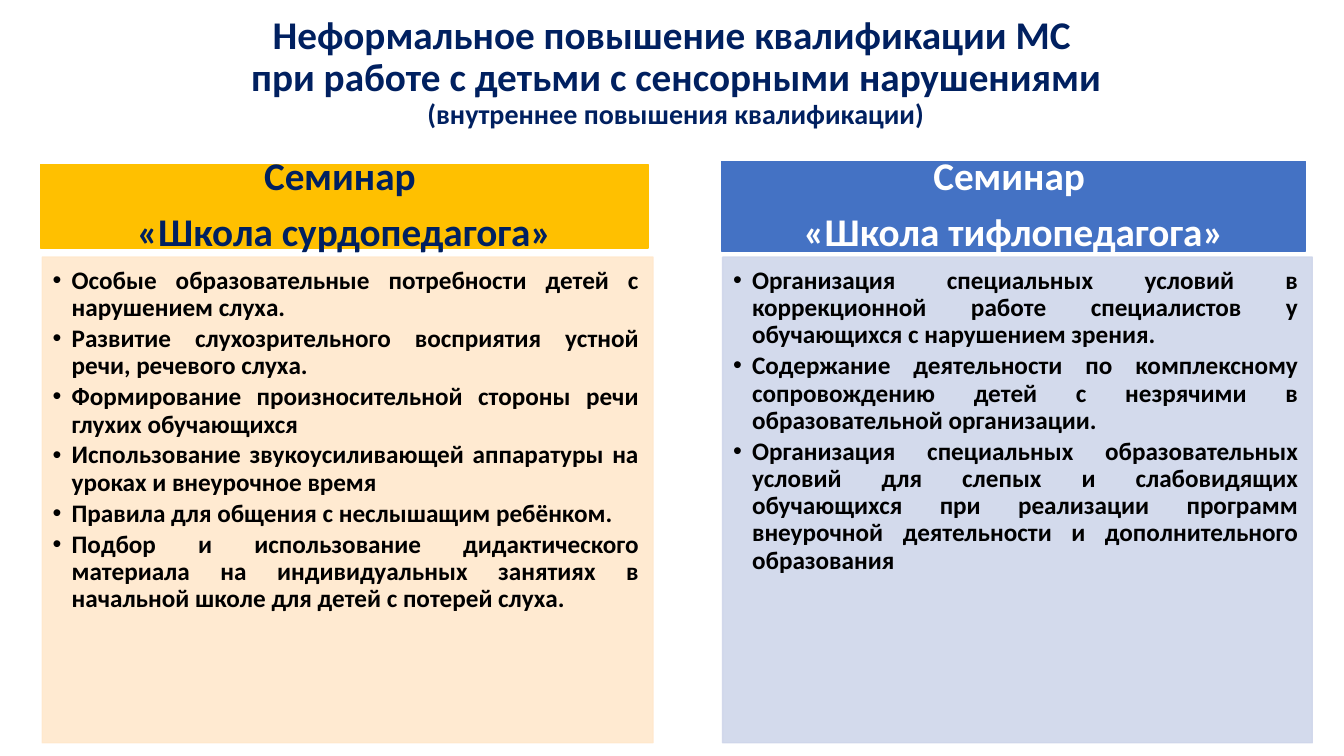
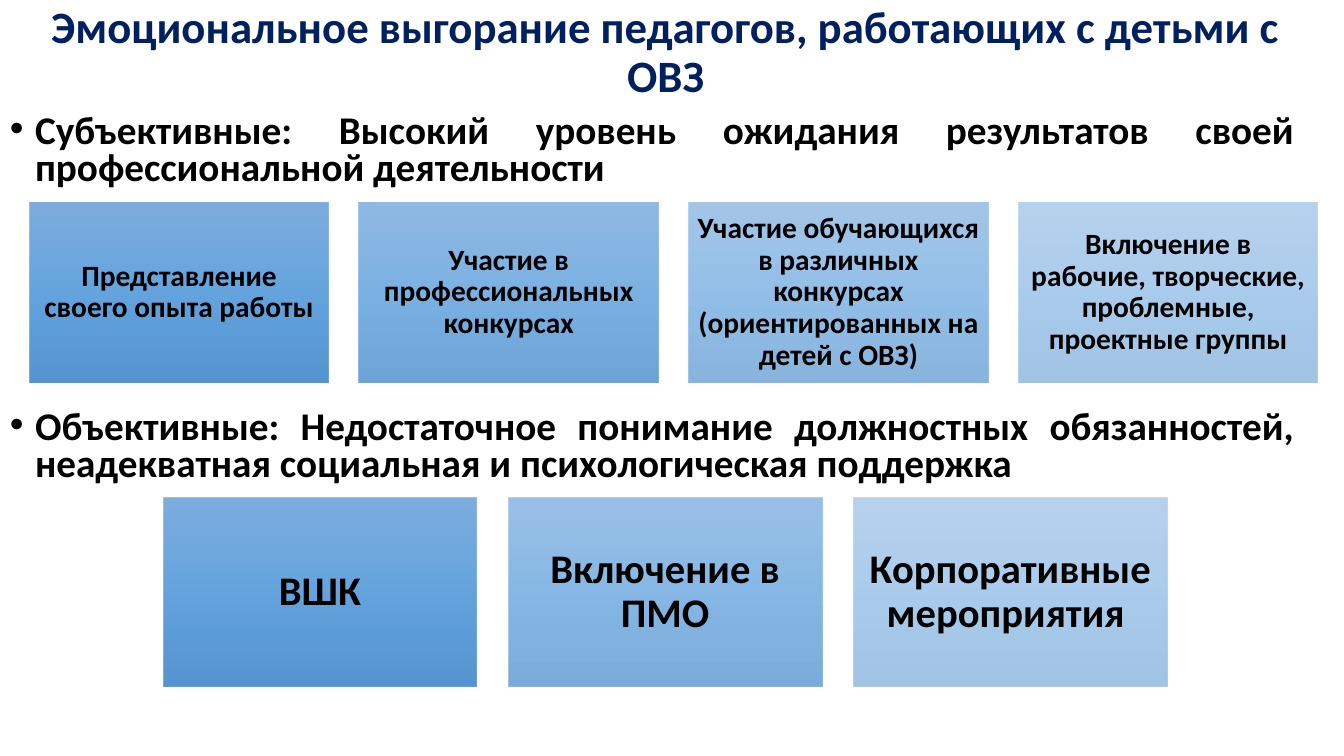
import copy

import pptx
import pptx.dml.color
import pptx.enum.shapes
import pptx.enum.text
import pptx.oxml.ns
import pptx.util
from lxml import etree

Pt = pptx.util.Pt
RGBColor = pptx.dml.color.RGBColor
ALIGN = pptx.enum.text.PP_ALIGN
ANCHOR = pptx.enum.text.MSO_ANCHOR
qn = pptx.oxml.ns.qn

NAVY = RGBColor(0x00, 0x20, 0x60)
BLACK = RGBColor(0x00, 0x00, 0x00)
WHITE = RGBColor(0xFF, 0xFF, 0xFF)
GOLD = RGBColor(0xFF, 0xC0, 0x00)
CREAM = RGBColor(0xFF, 0xE8, 0xCC)
BLUE = RGBColor(0x44, 0x72, 0xC4)
LAVENDER = RGBColor(0xCF, 0xD6, 0xEA)
TILE_GRADIENT = (
    RGBColor(0x71, 0xA6, 0xDB),
    RGBColor(0x55, 0x9B, 0xDB),
    RGBColor(0x44, 0x8A, 0xCA),
)
FONT = "Calibri"


def set_attributes(target, values):
    for name, value in values.items():
        setattr(target, name, value)


def set_opacity(shape, percent):
    """Apply one opacity to every fill and line colour of the shape."""
    for color in list(shape._element.spPr.iter(qn("a:srgbClr"))):
        alpha = etree.SubElement(color, qn("a:alpha"))
        alpha.set("val", str(round(percent * 1000)))


class Deck:
    def __init__(self):
        self.presentation = pptx.Presentation()
        set_attributes(self.presentation, {"slide_width": Pt(960), "slide_height": Pt(540)})
        self.slide = None

    def add_slide(self):
        layout = self.presentation.slide_layouts[6]
        self.slide = self.presentation.slides.add_slide(layout)

    def set_frame(self, shape, anchor, insets):
        sides = ("margin_left", "margin_top", "margin_right", "margin_bottom")
        frame = shape.text_frame
        set_attributes(frame, {
            "word_wrap": True,
            "auto_size": pptx.enum.text.MSO_AUTO_SIZE.NONE,
            "vertical_anchor": anchor,
            **{side: Pt(inset) for side, inset in zip(sides, insets)},
        })
        return frame

    def add_paragraphs(self, frame, texts, size, color, **paragraph_format):
        values = {"alignment": ALIGN.CENTER, "line_spacing": 0.9,
                  "space_before": Pt(0), "space_after": Pt(0), **paragraph_format}
        for index, text in enumerate(texts):
            paragraph = frame.add_paragraph() if index else frame.paragraphs[0]
            set_attributes(paragraph, values)
            self.add_run(paragraph, text, size, color)

    def add_run(self, paragraph, text, size, color):
        run = paragraph.add_run()
        run.text = text
        set_attributes(run.font, {"name": FONT, "size": Pt(size), "bold": True})
        run.font.color.rgb = color

    def add_bullets(self, frame, indent):
        for paragraph in frame.paragraphs:
            properties = paragraph._p.get_or_add_pPr()
            properties.set("marL", str(Pt(indent)))
            properties.set("indent", str(-Pt(indent)))
            etree.SubElement(properties, qn("a:buFont")).set("typeface", "Arial")
            etree.SubElement(properties, qn("a:buChar")).set("char", "•")

    def text_box(self, box, anchor):
        shape = self.slide.shapes.add_textbox(*map(Pt, box))
        return self.set_frame(shape, anchor, (7.2, 3.6, 7.2, 3.6))

    def title(self, box, lines, size, subtitle=None, subtitle_size=20):
        frame = self.text_box(box, ANCHOR.MIDDLE)
        self.add_paragraphs(frame, lines[:1], size, NAVY)
        paragraph = frame.paragraphs[0]
        for line in lines[1:]:
            paragraph.add_line_break()
            self.add_run(paragraph, line, size, NAVY)
        if subtitle:
            paragraph.add_line_break()
            self.add_run(paragraph, subtitle, subtitle_size, NAVY)

    def statement(self, box, text):
        frame = self.text_box(box, ANCHOR.TOP)
        self.add_paragraphs(frame, [text], 28, BLACK,
                            alignment=ALIGN.JUSTIFY, line_spacing=0.8)
        self.add_bullets(frame, 18)

    def rectangle(self, box):
        kind = pptx.enum.shapes.MSO_SHAPE.RECTANGLE
        shape = self.slide.shapes.add_shape(kind, *map(Pt, box))
        shape.shadow.inherit = False
        return shape

    def solid_rectangle(self, box, color):
        shape = self.rectangle(box)
        shape.fill.solid()
        shape.fill.fore_color.rgb = color
        shape.line.color.rgb = color
        shape.line.width = Pt(1)
        return shape

    def header(self, box, lines, fill, color):
        shape = self.solid_rectangle(box, fill)
        frame = self.set_frame(shape, ANCHOR.MIDDLE, (16, 9, 16, 9))
        self.add_paragraphs(frame, lines, 28, color, space_after=Pt(9.8))

    def panel(self, box, items, fill):
        shape = self.solid_rectangle(box, fill)
        set_opacity(shape, 90)
        frame = self.set_frame(shape, ANCHOR.TOP, (7.5, 7.5, 10, 11.5))
        self.add_paragraphs(frame, items, 18, BLACK,
                            alignment=ALIGN.JUSTIFY, space_after=Pt(2.7))
        self.add_bullets(frame, 13.5)

    def tile(self, box, text, size, inset, opacity):
        shape = self.rectangle(box)
        shape.line.fill.background()
        shape.fill.gradient()
        shape.fill.gradient_angle = 270
        first_stop = shape._element.spPr.find(".//" + qn("a:gs"))
        first_stop.addnext(copy.deepcopy(first_stop))
        for index, stop in enumerate(shape.fill.gradient_stops):
            stop.position = index / 2
            stop.color.rgb = TILE_GRADIENT[index]
        set_opacity(shape, opacity)
        frame = self.set_frame(shape, ANCHOR.MIDDLE, [inset] * 4)
        self.add_paragraphs(frame, [text], size, BLACK)

    def tile_row(self, left, top, width, height, step, texts, size, inset):
        """Lay out equal tiles that fade from 90 to 50 percent opacity."""
        for index, text in enumerate(texts):
            opacity = 90 - 40 * index / (len(texts) - 1)
            self.tile((left + index * step, top, width, height), text, size, inset, opacity)


def build_seminars(deck):
    deck.add_slide()
    deck.title(
        (17.3, 0, 931, 104.4),
        ["Неформальное повышение квалификации МС ",
         "при работе с детьми с сенсорными нарушениями"],
        28, "(внутреннее повышения квалификации)")
    deck.header((28.8, 117.4, 434.2, 59.8), ["Семинар ", "«Школа сурдопедагога»"], GOLD, NAVY)
    deck.panel((30.2, 183.6, 436.3, 347), [
        "Особые образовательные потребности детей с нарушением слуха.",
        "Развитие слухозрительного восприятия устной речи, речевого слуха.",
        "Формирование произносительной стороны речи глухих обучающихся",
        "Использование звукоусиливающей аппаратуры на уроках и внеурочное время",
        "Правила для общения с неслышащим ребёнком.",
        "Подбор и использование дидактического материала на индивидуальных занятиях "
        "в начальной школе для детей с потерей слуха.",
    ], CREAM)
    deck.header((515.5, 115.2, 416.9, 64), ["Семинар ", "«Школа тифлопедагога»"], BLUE, WHITE)
    deck.panel((516.2, 183.6, 421.2, 347), [
        "Организация специальных условий в коррекционной работе специалистов "
        "у обучающихся с нарушением зрения.",
        "Содержание деятельности по комплексному сопровождению детей с незрячими "
        "в образовательной организации.",
        "Организация специальных образовательных условий для слепых и слабовидящих "
        "обучающихся при реализации программ внеурочной деятельности "
        "и дополнительного образования",
    ], LAVENDER)


def build_burnout(deck):
    deck.add_slide()
    deck.title((0, 11.5, 951, 53.3),
               ["Эмоциональное выгорание педагогов, работающих с детьми с ОВЗ"], 32)
    deck.statement((0, 77.8, 931, 62),
                   "Субъективные: Высокий уровень ожидания результатов своей "
                   "профессиональной деятельности")
    deck.tile_row(20.9, 144.7, 214, 128.2, 235.5, [
        "Представление своего опыта работы",
        "Участие в профессиональных конкурсах",
        "Участие обучающихся в различных конкурсах (ориентированных на детей с ОВЗ)",
        "Включение в рабочие, творческие, проблемные, проектные группы",
    ], 21, 6.3)
    deck.statement((0, 289.3, 931, 62),
                   "Объективные: Недостаточное понимание должностных обязанностей, "
                   "неадекватная социальная и психологическая поддержка")
    deck.tile_row(116.6, 355.7, 224, 134.6, 246.6, [
        "ВШК", "Включение в ПМО", "Корпоративные мероприятия ",
    ], 29, 8.7)


def main():
    deck = Deck()
    build_seminars(deck)
    build_burnout(deck)
    deck.presentation.save("out.pptx")


if __name__ == "__main__":
    main()
